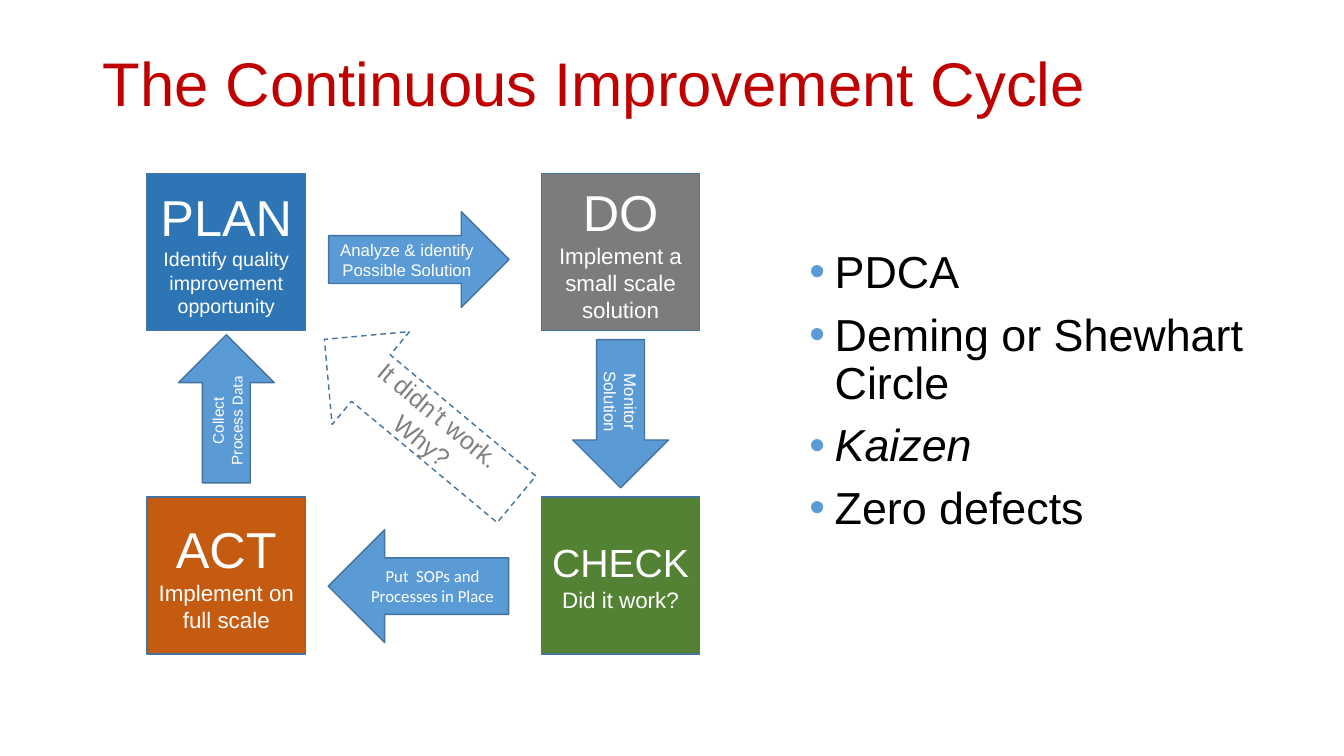
from lxml import etree
from pptx import Presentation
from pptx.dml.color import RGBColor
from pptx.enum.dml import MSO_LINE
from pptx.enum.shapes import MSO_SHAPE
from pptx.enum.text import MSO_ANCHOR, PP_ALIGN
from pptx.oxml.ns import qn
from pptx.util import Inches, Pt

RECTANGLE = MSO_SHAPE.RECTANGLE
RIGHT_ARROW = MSO_SHAPE.RIGHT_ARROW
DOWN_ARROW = MSO_SHAPE.DOWN_ARROW
DASH = MSO_LINE.DASH
MIDDLE = MSO_ANCHOR.MIDDLE
TOP = MSO_ANCHOR.TOP
CENTER = PP_ALIGN.CENTER
LEFT = PP_ALIGN.LEFT

WHITE, BLACK, GRAY, RED = "FFFFFF", "000000", "808080", "C00000"
BLUE, OUTLINE = "5B9BD5", "43739E"

TITLE = "The Continuous Improvement Cycle"
BULLETS = [
    ("PDCA", False),
    ("Deming or Shewhart Circle", False),
    ("Kaizen", True),
    ("Zero defects", False),
]

BOX_WIDTH, BOX_HEIGHT = 1.57, 1.56
COLUMNS = (1.46, 5.37)
ROWS = (1.72, 4.93)
STAGES = [
    (0, 0, "2E75B6", "PLAN", 36, "Identify quality improvement opportunity", 14),
    (1, 0, "7C7C7C", "DO", 36, "Implement a small scale solution", 16),
    (1, 1, "548235", "CHECK", 28, "Did it work?", 16),
    (0, 1, "C55A11", "ACT", 36, "Implement on full scale", 16),
]

ARROWS = [
    (RIGHT_ARROW, (3.26, 2.1, 1.79, 0.95), 0, BLUE, WHITE,
     [("Analyze & identify Possible Solution", 12, "Arial")]),
    (RIGHT_ARROW, (5.42, 3.63, 1.47, 0.95), 90, BLUE, WHITE,
     [("Monitor Solution", 12, "Arial")]),
    (DOWN_ARROW, (3.59, 4.92, 1.12, 1.79), 90, BLUE, WHITE,
     [("Put  SOPs and Processes in Place", 12, "Calibri")]),
    (RIGHT_ARROW, (1.51, 3.58, 1.47, 0.95), 270, BLUE, WHITE,
     [("Collect", 11, "Arial"), (" ", 12, "Arial"),
      ("Process ", 11, "Arial"), ("Data", 11, "Calibri")]),
    (DOWN_ARROW, (3.57, 2.92, 1.2, 2.48), 129.8, None, GRAY,
     [("It didn’t work.  Why?", 18, "Arial")]),
]


def color(value):
    return RGBColor.from_string(value)


def add_run(paragraph, text, size, font_color, font="Arial", italic=False):
    run = paragraph.add_run()
    run.text = text
    run.font.size = Pt(size)
    run.font.name = font
    run.font.italic = italic
    run.font.color.rgb = color(font_color)


def next_paragraph(frame, index, alignment):
    paragraph = frame.add_paragraph() if index else frame.paragraphs[0]
    paragraph.alignment = alignment
    return paragraph


def add_shape(slide, kind, place, fill):
    shape = slide.shapes.add_shape(kind, *map(Inches, place))
    shape.shadow.inherit = False
    if fill:
        shape.fill.solid()
        shape.fill.fore_color.rgb = color(fill)
    else:
        shape.fill.background()
        shape.line.dash_style = DASH
    shape.line.color.rgb = color(OUTLINE)
    shape.line.width = Pt(1)
    shape.text_frame.word_wrap = True
    shape.text_frame.vertical_anchor = MIDDLE
    return shape


def add_text_box(slide, place, anchor):
    frame = slide.shapes.add_textbox(*map(Inches, place)).text_frame
    frame.word_wrap = True
    frame.vertical_anchor = anchor
    return frame


def add_bullet(paragraph):
    properties = paragraph._p.get_or_add_pPr()
    properties.set("marL", str(Inches(0.25)))
    properties.set("indent", str(-Inches(0.25)))
    bullet_color = etree.SubElement(properties, qn("a:buClr"))
    etree.SubElement(bullet_color, qn("a:srgbClr"), val=BLUE)
    etree.SubElement(properties, qn("a:buFont"), typeface="Arial")
    etree.SubElement(properties, qn("a:buChar"), char="•")


def main():
    presentation = Presentation()
    presentation.slide_width = Inches(13.33)
    presentation.slide_height = Inches(7.5)
    slide = presentation.slides.add_slide(presentation.slide_layouts[6])

    title = add_text_box(slide, (0.92, 0.4, 11.5, 0.92), MIDDLE)
    paragraph = next_paragraph(title, 0, LEFT)
    paragraph.line_spacing = 0.9
    add_run(paragraph, TITLE, 44, RED)

    for column, row, fill, name, name_size, detail, detail_size in STAGES:
        place = (COLUMNS[column], ROWS[row], BOX_WIDTH, BOX_HEIGHT)
        frame = add_shape(slide, RECTANGLE, place, fill).text_frame
        for index, (text, size) in enumerate([(name, name_size), (detail, detail_size)]):
            add_run(next_paragraph(frame, index, CENTER), text, size, WHITE)

    for kind, place, rotation, fill, font_color, runs in ARROWS:
        arrow = add_shape(slide, kind, place, fill)
        arrow.rotation = rotation
        if kind == DOWN_ARROW:
            arrow.text_frame._txBody.bodyPr.set("vert", "vert270")
        paragraph = next_paragraph(arrow.text_frame, 0, CENTER)
        for text, size, font in runs:
            add_run(paragraph, text, size, font_color, font)

    frame = add_text_box(slide, (7.93, 2.43, 5.01, 3.2), TOP)
    for index, (text, italic) in enumerate(BULLETS):
        paragraph = next_paragraph(frame, index, LEFT)
        paragraph.line_spacing = 0.9
        paragraph.space_before = Pt(10)
        add_bullet(paragraph)
        add_run(paragraph, text, 32, BLACK, italic=italic)

    presentation.save("out.pptx")


if __name__ == "__main__":
    main()
